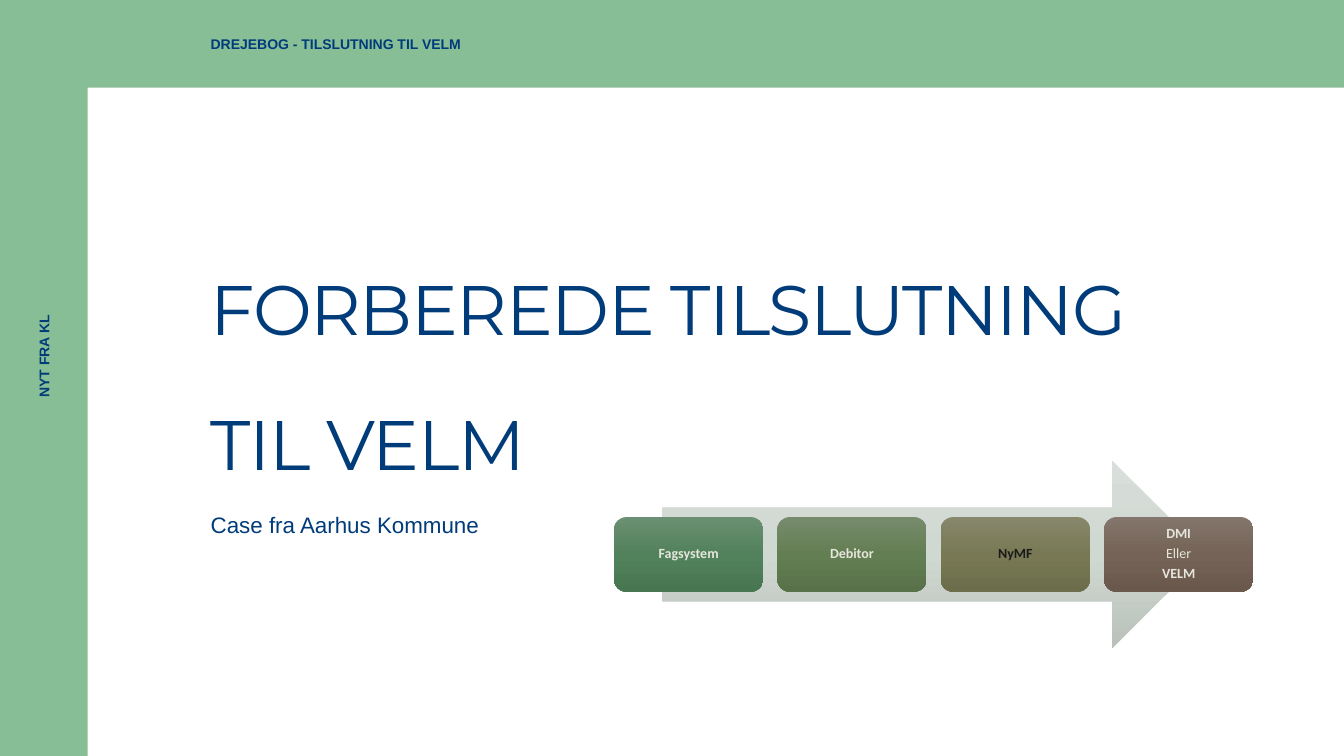
from copy import deepcopy

from pptx import Presentation
from pptx.dml.color import RGBColor
from pptx.enum import shapes, text
from pptx.oxml.ns import qn
from pptx.util import Inches, Pt

COLORS = {"green": "88BE96", "navy": "003B7A", "light": "E6E6DD", "dark": "1A1A1A"}
ARROW = ("D8DED9", "D0D8D2", "B9C1BA")
STEPS = [
    (["Fagsystem"], "light", ("6B8F72", "52825C", "477650")),
    (["Debitor"], "light", ("778B6C", "647E53", "587148")),
    (["NyMF"], "dark", ("87876C", "787954", "6C6D4A")),
    (["DMI", "Eller", "VELM"], "light", ("84766D", "746356", "69584B")),
]


def set_text(shape, lines, size, color, font="Arial", bold=False,
             align=text.PP_ALIGN.LEFT, anchor=text.MSO_ANCHOR.MIDDLE, inset=0):
    frame = shape.text_frame
    frame.text = "\n".join(lines)
    frame.word_wrap = True
    frame.auto_size = text.MSO_AUTO_SIZE.NONE
    frame.vertical_anchor = anchor
    frame.margin_left = frame.margin_right = Inches(inset)
    frame.margin_top = frame.margin_bottom = Inches(inset)
    for par in frame.paragraphs:
        par.alignment = align
        par.font.name = font
        par.font.size = Pt(size)
        par.font.bold = bold
        par.font.color.rgb = RGBColor.from_string(COLORS[color])
    return frame.paragraphs


def add_label(slide, box, line, size, **style):
    label = slide.shapes.add_textbox(*map(Inches, box))
    set_text(label, [line], size, "navy", **style)
    return label


def add_frame(slide):
    wide, high, band = Inches(13.33), Inches(7.5), Inches(0.87)
    outline = slide.shapes.build_freeform(0, 0)
    outline.add_line_segments(
        [(wide, 0), (wide, band), (band, band), (band, high), (0, high)])
    frame = outline.convert_to_shape()
    frame.shadow.inherit = False
    frame.fill.solid()
    frame.fill.fore_color.rgb = RGBColor.from_string(COLORS["green"])
    frame.line.fill.background()


def add_shaded(slide, kind, box, shades):
    shape = slide.shapes.add_shape(kind, *map(Inches, box))
    shape.shadow.inherit = False
    shape.line.fill.background()
    shape.fill.gradient()
    shape.fill.gradient_angle = 270
    first = shape._element.spPr.find(qn("a:gradFill")).gsLst[0]
    first.addnext(deepcopy(first))
    for index, (stop, shade) in enumerate(zip(shape.fill.gradient_stops, shades)):
        stop.position = index / 2
        stop.color.rgb = RGBColor.from_string(shade)
    return shape


def add_title(slide, lines):
    title = slide.shapes.title
    title.left, title.top = Inches(2.09), Inches(1.42)
    title.width, title.height = Inches(10.34), Inches(3.38)
    pars = set_text(title, lines, 50, "navy", font="Montserrat",
                    anchor=text.MSO_ANCHOR.BOTTOM)
    for index, par in enumerate(pars):
        par.line_spacing = 0.8
        par.space_before = Pt(48 * index)
        for run in par.runs:
            run.font._element.set("spc", "-100")


def add_step(slide, index, lines, color, shades):
    box = (6.09 + 1.62 * index, 5.13, 1.48, 0.74)
    step = add_shaded(slide, shapes.MSO_SHAPE.ROUNDED_RECTANGLE, box, shades)
    pars = set_text(step, lines, 10, color, font="Calibri", bold=True,
                    align=text.PP_ALIGN.CENTER, inset=0.04)
    for par in pars:
        par.line_spacing = 0.9
        par.space_after = Pt(3.5)
        par.font.bold = par.text != "Eller"


def main():
    deck = Presentation()
    deck.slide_width, deck.slide_height = Inches(13.33), Inches(7.5)
    slide = deck.slides.add_slide(deck.slide_layouts[5])
    add_frame(slide)
    add_title(slide, ["FORBEREDE TILSLUTNING", "TIL VELM"])
    add_label(slide, (2.09, 5.07, 9.97, 0.43), "Case fra Aarhus Kommune", 16,
              anchor=text.MSO_ANCHOR.TOP)
    add_label(slide, (2.09, 0, 9.97, 0.87), "DREJEBOG - TILSLUTNING TIL VELM", 10,
              bold=True)
    side = add_label(slide, (-2.23, 3.1, 5.33, 0.87), "NYT FRA KL", 10, bold=True,
                     align=text.PP_ALIGN.CENTER)
    side.rotation = 270
    add_shaded(slide, shapes.MSO_SHAPE.RIGHT_ARROW, (6.57, 4.57, 5.39, 1.86), ARROW)
    for index, step in enumerate(STEPS):
        add_step(slide, index, *step)
    deck.save("out.pptx")


if __name__ == "__main__":
    main()
